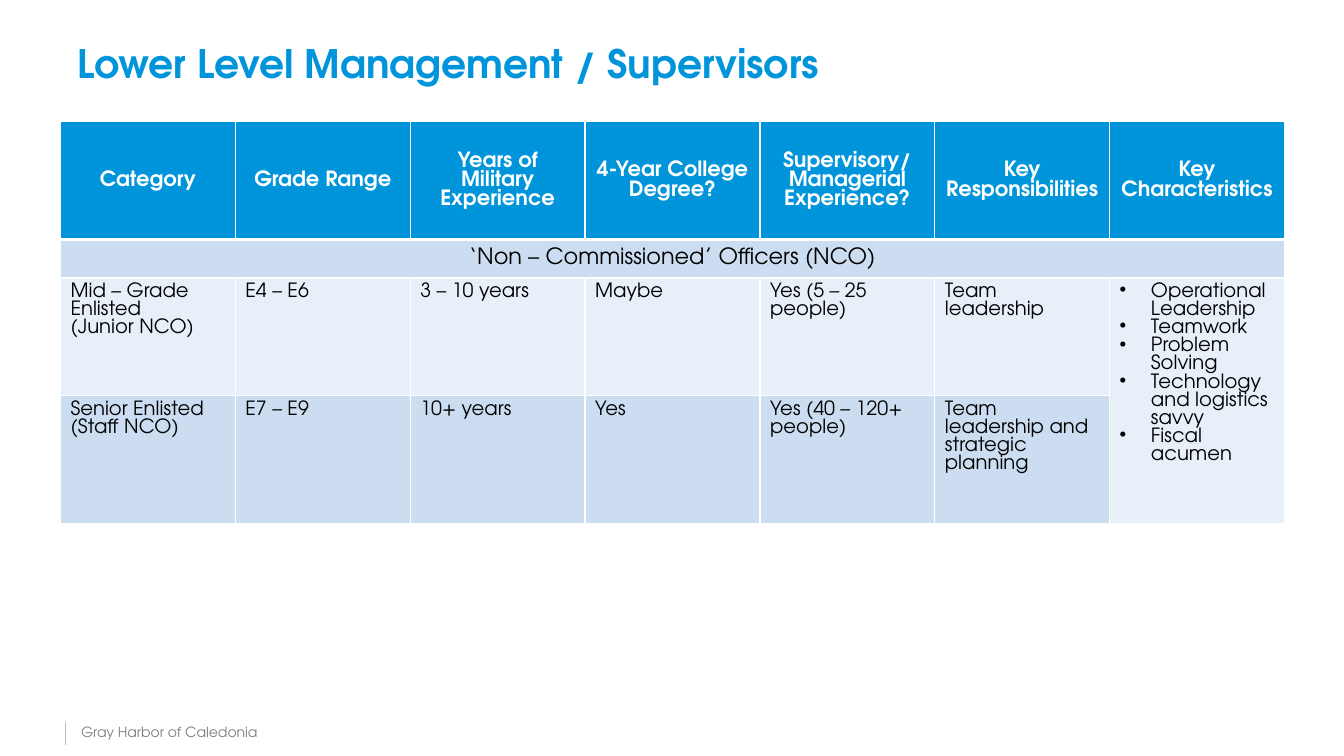
from dataclasses import dataclass
from typing import Any

from lxml import etree
from pptx import Presentation
from pptx.dml.color import RGBColor
from pptx.enum.shapes import MSO_CONNECTOR
from pptx.enum.text import MSO_ANCHOR, PP_ALIGN
from pptx.oxml import parse_xml
from pptx.oxml.ns import nsdecls, qn
from pptx.util import Emu, Inches, Pt

FONT = "TeX Gyre Adventor"
BLUE = RGBColor(0x00, 0x95, 0xDA)
WHITE = RGBColor(0xFF, 0xFF, 0xFF)
BLACK = RGBColor(0x00, 0x00, 0x00)
GRAY = RGBColor(0x80, 0x80, 0x80)
RULE_GRAY = RGBColor(0xBE, 0xC0, 0xC2)
MID_BLUE = RGBColor(0xCC, 0xDD, 0xF1)
PALE_BLUE = RGBColor(0xE7, 0xEF, 0xF8)

LEFT, CENTER = PP_ALIGN.LEFT, PP_ALIGN.CENTER
TOP, MIDDLE = MSO_ANCHOR.TOP, MSO_ANCHOR.MIDDLE
STRAIGHT = MSO_CONNECTOR.STRAIGHT

SLIDE_WIDTH, SLIDE_HEIGHT = Inches(13.33), Inches(7.5)
TABLE_WIDTH = Inches(12.14)
ROW_HEIGHTS = (1.17, 0.38, 1.17, 1.17)
BULLET_INDENT = Inches(0.31)


@dataclass(frozen=True)
class TextStyle:
    size: float
    color: RGBColor
    bold: bool = False
    align: Any = LEFT
    anchor: Any = TOP
    bulleted: bool = False


@dataclass(frozen=True)
class TableRow:
    texts: tuple[str, ...]
    fill: RGBColor
    style: TextStyle
    bottom_border: float = 1


TITLE = TextStyle(28, BLUE, bold=True, anchor=MIDDLE)
HEADER = TextStyle(15, WHITE, bold=True, align=CENTER, anchor=MIDDLE)
BAND = TextStyle(16, BLACK, align=CENTER, anchor=MIDDLE)
BODY = TextStyle(14, BLACK)
TRAITS = TextStyle(14, BLACK, bulleted=True)
FOOTER = TextStyle(10, GRAY)

CHARACTERISTICS = "\n".join((
    "Operational Leadership", "Teamwork", "Problem Solving",
    "Technology and logistics savvy", "Fiscal acumen",
))
ROWS = (
    TableRow(("Category", "Grade Range", "Years of Military Experience",
              "4-Year College Degree?", "Supervisory/\nManagerial Experience?",
              "Key Responsibilities", "Key Characteristics"), BLUE, HEADER, 3),
    TableRow(("‘Non – Commissioned’ Officers (NCO)",), MID_BLUE, BAND),
    TableRow(("Mid – Grade Enlisted\n(Junior NCO)", "E4 – E6", "3 – 10 years", "Maybe",
              "Yes (5 – 25 people)", "Team leadership"), PALE_BLUE, BODY),
    TableRow(("Senior Enlisted\n(Staff NCO)", "E7 – E9", "10+ years", "Yes",
              "Yes (40 – 120+ people)", "Team leadership and strategic planning"),
             MID_BLUE, BODY),
)
COLUMN_COUNT = len(ROWS[0].texts)


def across(share: float) -> Emu:
    return Emu(round(SLIDE_WIDTH * share))


def down(share: float) -> Emu:
    return Emu(round(SLIDE_HEIGHT * share))


def set_attributes(target: Any, values: dict[str, Any]) -> None:
    for attribute, value in values.items():
        setattr(target, attribute, value)


def add_bullet(paragraph: Any) -> None:
    properties = paragraph._p.get_or_add_pPr()
    properties.set("marL", str(BULLET_INDENT))
    properties.set("indent", str(-BULLET_INDENT))
    etree.SubElement(properties, qn("a:buChar")).set("char", "•")


def write_text(frame: Any, text: str, style: TextStyle) -> None:
    frame.text = text
    for paragraph in frame.paragraphs:
        if style.bulleted:
            add_bullet(paragraph)
        paragraph.alignment = style.align
        for run in paragraph.runs:
            set_attributes(run.font, {"name": FONT, "size": Pt(style.size), "bold": style.bold})
            run.font.color.rgb = style.color


def add_borders(cell: Any, top: float, bottom: float) -> None:
    properties = cell._tc.get_or_add_tcPr()
    widths = {"lnL": 1, "lnR": 1, "lnT": top, "lnB": bottom}
    for position, (side, width) in enumerate(widths.items()):
        properties.insert(position, parse_xml(
            f'<a:{side} {nsdecls("a")} w="{Pt(width)}"><a:solidFill>'
            f'<a:srgbClr val="{WHITE}"/></a:solidFill></a:{side}>'))


def write_cell(cell: Any, text: str, style: TextStyle) -> None:
    write_text(cell.text_frame, text, style)
    cell.vertical_anchor = style.anchor


def add_title(slide: Any) -> None:
    title = slide.shapes.title
    set_attributes(title, {"left": across(0.05), "top": down(0.04),
                           "width": across(0.9), "height": down(0.087)})
    set_attributes(title.text_frame, {"word_wrap": True, "vertical_anchor": TITLE.anchor})
    write_text(title.text_frame, "Lower Level Management / Supervisors", TITLE)


def add_grade_table(slide: Any) -> None:
    table = slide.shapes.add_table(
        len(ROWS), COLUMN_COUNT, across(0.045), down(0.161),
        TABLE_WIDTH, Inches(sum(ROW_HEIGHTS))).table
    set_attributes(table, {"first_row": False, "horz_banding": False})
    for column in table.columns:
        column.width = Emu(TABLE_WIDTH // COLUMN_COUNT)
    top_border = 1
    for row_index, (row, height) in enumerate(zip(ROWS, ROW_HEIGHTS)):
        table.rows[row_index].height = Inches(height)
        for cell in table.rows[row_index].cells:
            cell.fill.solid()
            cell.fill.fore_color.rgb = row.fill
            add_borders(cell, top_border, row.bottom_border)
        for column_index, text in enumerate(row.texts):
            write_cell(table.cell(row_index, column_index), text, row.style)
        top_border = row.bottom_border
    last_column = COLUMN_COUNT - 1
    table.cell(1, 0).merge(table.cell(1, last_column))
    traits = table.cell(2, last_column)
    traits.merge(table.cell(3, last_column))
    write_cell(traits, CHARACTERISTICS, TRAITS)


def add_footer(slide: Any) -> None:
    rule = slide.shapes.add_connector(
        STRAIGHT, across(0.049), down(0.955), across(0.049), down(0.985))
    rule.line.color.rgb = RULE_GRAY
    rule.line.width = Pt(0.5)
    etree.SubElement(rule._element.spPr, qn("a:effectLst"))
    organization = slide.shapes.add_textbox(
        across(0.053), down(0.951), across(0.215), down(0.036))
    organization.text_frame.word_wrap = True
    write_text(organization.text_frame, "Gray Harbor of Caledonia", FOOTER)


def main() -> None:
    deck = Presentation()
    set_attributes(deck, {"slide_width": SLIDE_WIDTH, "slide_height": SLIDE_HEIGHT})
    slide = deck.slides.add_slide(deck.slide_layouts.get_by_name("Title Only"))
    add_footer(slide)
    add_title(slide)
    add_grade_table(slide)
    deck.save("out.pptx")


if __name__ == "__main__":
    main()
